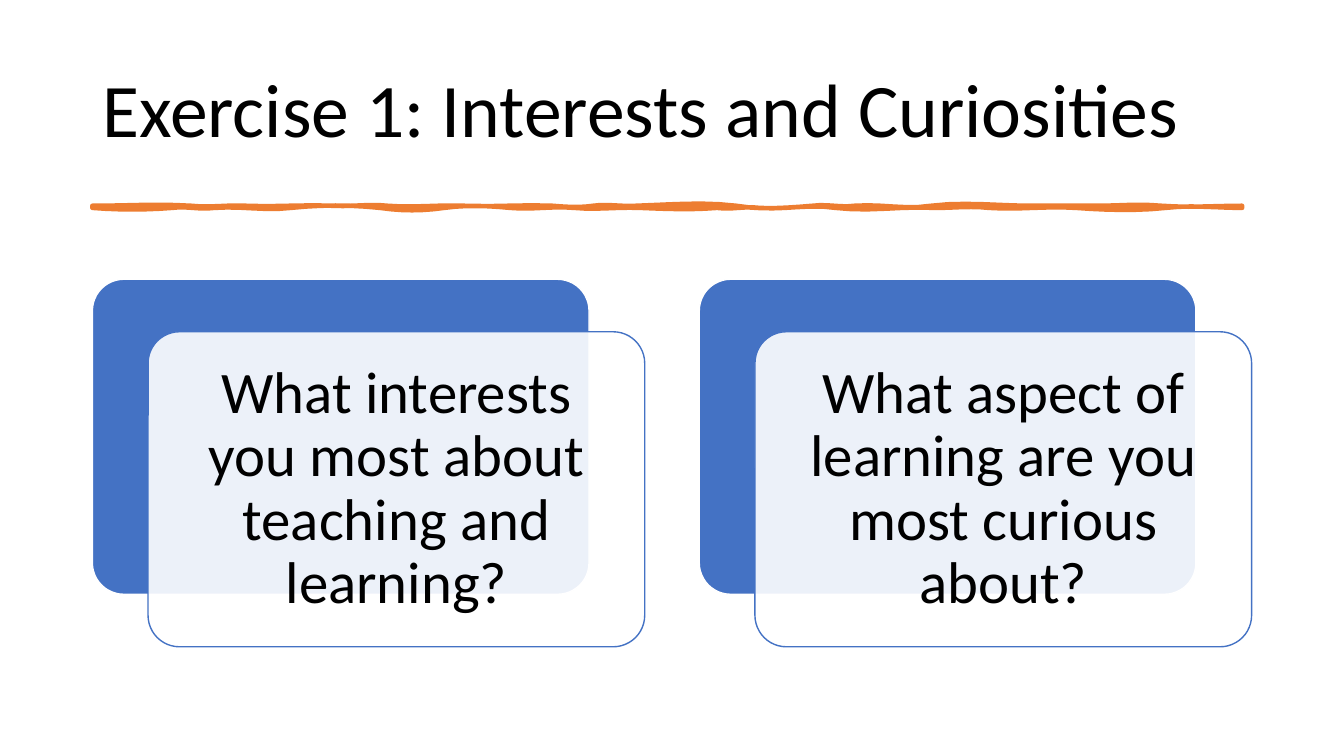
from lxml import etree
from pptx import Presentation
from pptx.dml.color import RGBColor
from pptx.enum.shapes import MSO_SHAPE
from pptx.enum.text import MSO_ANCHOR, MSO_AUTO_SIZE, PP_ALIGN
from pptx.oxml.ns import qn
from pptx.util import Pt

PX = 9525
SUBPIXELS = 25
CURVE_STEPS = 6
TITLE_ONLY = 5

ROUNDED = MSO_SHAPE.ROUNDED_RECTANGLE
MIDDLE = MSO_ANCHOR.MIDDLE
NO_AUTOFIT = MSO_AUTO_SIZE.NONE
LEFT, CENTER = PP_ALIGN.LEFT, PP_ALIGN.CENTER

BLACK = RGBColor(0x00, 0x00, 0x00)
WHITE = RGBColor(0xFF, 0xFF, 0xFF)
BLUE = RGBColor(0x44, 0x72, 0xC4)
ORANGE = RGBColor(0xED, 0x7D, 0x31)

MARGIN = 88
CARD_TOP, CARD_WIDTH, CARD_HEIGHT = 266, 473, 300
CARD_STEP = 578
OFFSET_X, OFFSET_Y = 53, 50

QUESTIONS = [
    "What interests you most about teaching and learning?",
    "What aspect of learning are you most curious about?",
]

UPPER_EDGE = [
    (182, 0, -2), (234, 2, -1), (318, 1, -1), (369, 1, -2),
    (442, 2, -1), (526, 1, -1), (565, 1, 2), (606, -2, 1),
    (701, -1, -4), (774, 4, 2), (814, -2, 2), (887, -2, 4),
    (982, -4, 0), (1044, 0, 0), (1106, 0, -2), (1183, 2, 0),
]
LOWER_EDGE = [
    (1110, 0, -3), (1025, 3, 2), (942, -2, 2), (891, -2, 0),
    (796, -2, 4), (723, -4, 2), (683, -2, 2), (610, 2, 1),
    (547, -1, 2), (486, -2, 2), (423, -2, -3), (362, 3, 3),
    (277, -3, -3), (204, 3, -2), (164, 2, -2), (88, 2, 2),
]


def wavy_edge(start_x, y, bends):
    points = [(start_x, y)]
    for end_x, first, second in bends:
        for step in range(1, CURVE_STEPS + 1):
            t = step / CURVE_STEPS
            x = start_x + (end_x - start_x) * t
            bend = 3 * t * (1 - t) * ((1 - t) * first + t * second)
            points.append((x, y + bend))
        start_x = end_x
    return points


class SlideBuilder:
    font_name = "Calibri"
    line_spacing = 0.9

    def __init__(self, presentation):
        layout = presentation.slide_layouts[TITLE_ONLY]
        self.slide = presentation.slides.add_slide(layout)

    def set_text(self, shape, text, size, alignment):
        text_frame = shape.text_frame
        text_frame.text = text
        text_frame.word_wrap = True
        text_frame.auto_size = NO_AUTOFIT
        text_frame.vertical_anchor = MIDDLE
        paragraph = text_frame.paragraphs[0]
        paragraph.alignment = alignment
        paragraph.line_spacing = self.line_spacing
        font = paragraph.runs[0].font
        font.name = self.font_name
        font.size = Pt(size)
        font.color.rgb = BLACK

    def paint(self, shape, fill, line, line_width):
        shape.shadow.inherit = False
        shape.fill.solid()
        shape.fill.fore_color.rgb = fill
        shape.line.color.rgb = line
        shape.line.width = Pt(line_width)

    def title(self, text, left, top, width, height):
        title = self.slide.shapes.title
        title.left, title.top = left * PX, top * PX
        title.width, title.height = width * PX, height * PX
        self.set_text(title, text, 54, LEFT)

    def brush_line(self, points):
        scaled = [(x * SUBPIXELS, y * SUBPIXELS) for x, y in points]
        builder = self.slide.shapes.build_freeform(*scaled[0], scale=PX / SUBPIXELS)
        builder.add_line_segments(scaled[1:], close=True)
        self.paint(builder.convert_to_shape(), ORANGE, ORANGE, 3.25)

    def rounded_box(self, left, top, fill, line):
        box = self.slide.shapes.add_shape(
            ROUNDED, left * PX, top * PX, CARD_WIDTH * PX, CARD_HEIGHT * PX)
        box.adjustments[0] = 0.1
        self.paint(box, fill, line, 1)
        return box

    def question_card(self, text, left, top):
        self.rounded_box(left, top, BLUE, WHITE)
        front = self.rounded_box(left + OFFSET_X, top + OFFSET_Y, WHITE, BLUE)
        color = front._element.spPr.find(qn("a:solidFill"))[0]
        etree.SubElement(color, qn("a:alpha"), val="90000")
        text_frame = front.text_frame
        text_frame.margin_left = text_frame.margin_right = 16 * PX
        text_frame.margin_top = text_frame.margin_bottom = 16 * PX
        self.set_text(front, text, 42, CENTER)


def main():
    presentation = Presentation()
    presentation.slide_width = 1280 * PX
    presentation.slide_height = 720 * PX
    builder = SlideBuilder(presentation)
    builder.title("Exercise 1: Interests and Curiosities", MARGIN, 38, 1104, 139)
    upper = wavy_edge(MARGIN, 196, UPPER_EDGE)
    lower = wavy_edge(UPPER_EDGE[-1][0], 198, LOWER_EDGE)
    builder.brush_line(upper + lower)
    for column, question in enumerate(QUESTIONS):
        builder.question_card(question, MARGIN + column * CARD_STEP, CARD_TOP)
    presentation.save("out.pptx")


if __name__ == "__main__":
    main()
